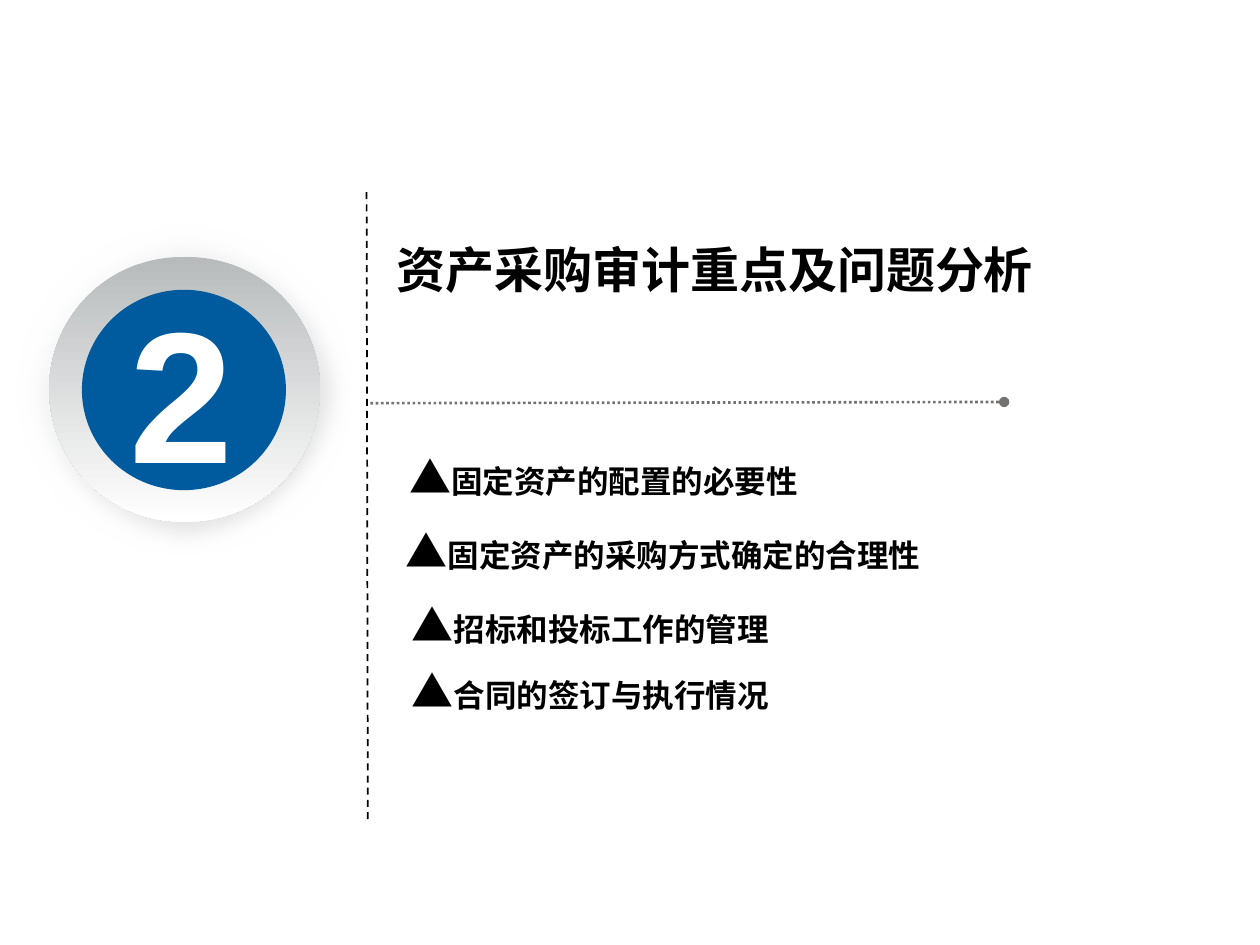
from dataclasses import dataclass

from lxml import etree
from pptx import Presentation
from pptx import util as u
from pptx.dml.color import RGBColor
from pptx.enum import dml, shapes
from pptx.oxml.ns import qn


@dataclass(frozen=True)
class Theme:
    latin: str = "Arial"
    chinese: str = "Noto Sans CJK SC"
    black: str = "000000"
    white: str = "FFFFFF"
    blue: str = "005A9E"
    halo: str = "D9D9D9"
    ring: str = "B8BBBC"
    rule: str = "767171"
    title_size: float = 28
    number_size: float = 106.7
    marker_size: float = 24
    item_size: float = 18


THEME = Theme()
OVAL = shapes.MSO_SHAPE.OVAL


def points(*values):
    return [u.Pt(value) for value in values]


def add_element(parent, tag, **attributes):
    element = etree.SubElement(parent, qn(tag))
    for name, value in attributes.items():
        element.set(name, str(value))
    return element


def add_disc(slide, box, kind=OVAL, color=THEME.blue, gradient=None):
    """Add a borderless round shape, filled plainly or from a colour to white."""
    shape = slide.shapes.add_shape(kind, *points(*box))
    shape.shadow.inherit = False
    shape.line.fill.background()
    if gradient is None:
        shape.fill.solid()
        shape.fill.fore_color.rgb = RGBColor.from_string(color)
    else:
        shape.fill.gradient()
        shape.fill.gradient_angle = gradient
        for stop, position, shade in zip(shape.fill.gradient_stops, (0, 1), (color, THEME.white)):
            stop.position = position
            stop.color.rgb = RGBColor.from_string(shade)
    return shape


def make_halo(shape, radius):
    """Turn the gradient radial from the lower right and soften the edge."""
    properties = shape._element.spPr
    gradient = properties.find(qn("a:gradFill"))
    gradient.remove(gradient.find(qn("a:lin")))
    radial = add_element(gradient, "a:path", path="circle")
    add_element(radial, "a:fillToRect", l=100000, t=100000)
    effects = properties.find(qn("a:effectLst"))
    add_element(effects, "a:softEdge", rad=int(u.Pt(radius)))


def add_line(slide, ends, color, width, dash, tail=None):
    line = slide.shapes.add_connector(shapes.MSO_CONNECTOR.STRAIGHT, *points(*ends))
    line.line.color.rgb = RGBColor.from_string(color)
    line.line.width = u.Pt(width)
    line.line.dash_style = dash
    if tail:
        add_element(line.line._get_or_add_ln(), "a:tailEnd", type=tail)
    add_element(line._element.spPr, "a:effectLst")


def add_text(slide, box, runs, font=THEME.latin, color=THEME.black, spacing=None,
             insets=(7.2, 3.6)):
    """Add one paragraph; runs holds (wording, size, bold) for each run."""
    frame = slide.shapes.add_textbox(*points(*box)).text_frame
    frame.word_wrap = True
    frame.margin_left = frame.margin_right = u.Pt(insets[0])
    frame.margin_top = frame.margin_bottom = u.Pt(insets[1])
    paragraph = frame.paragraphs[0]
    if spacing:
        paragraph.line_spacing = u.Pt(spacing)
    for wording, size, bold in runs:
        run = paragraph.add_run()
        run.text = wording
        run.font.name = font
        run.font.size = u.Pt(size)
        run.font.bold = bold
        run.font.color.rgb = RGBColor.from_string(color)
        add_element(run.font._element, "a:ea", typeface=THEME.chinese)


def add_item(slide, box, wording, **options):
    runs = [("▲", THEME.marker_size, False), (wording, THEME.item_size, True)]
    add_text(slide, box, runs, font=THEME.chinese, **options)


def add_number_badge(slide, number):
    halo = add_disc(slide, (8.6, 128.2, 193.7, 189.4), color=THEME.halo, gradient=0)
    make_halo(halo, 12)
    ring = add_disc(slide, (28.1, 146.9, 154.8, 151.2), shapes.MSO_SHAPE.ROUNDED_RECTANGLE,
                    THEME.ring, gradient=270)
    ring.adjustments[0] = 0.5
    add_disc(slide, (46.8, 165.6, 116.6, 114.5))
    add_text(slide, (67, 154.8, 77, 135.4), [(number, THEME.number_size, True)],
             color=THEME.white)


def main():
    presentation = Presentation()
    presentation.slide_width, presentation.slide_height = points(720, 540)
    slide = presentation.slides.add_slide(presentation.slide_layouts[6])

    add_text(slide, (226.8, 130.3, 463, 40.3),
             [("资产采购审计重点及问题分析", THEME.title_size, True)],
             spacing=40, insets=(0, 0))
    add_number_badge(slide, "2")
    add_line(slide, (210.2, 468, 209.5, 108.7), THEME.black, 1, dml.MSO_LINE.DASH)
    add_line(slide, (211.7, 230.4, 573.8, 229.7), THEME.rule, 1.5,
             dml.MSO_LINE.ROUND_DOT, tail="oval")

    add_item(slide, (226.8, 247, 383, 79.2), "固定资产的配置的必要性", spacing=36)
    add_item(slide, (226.8, 290.2, 418.3, 41), "固定资产的采购方式确定的合理性",
             spacing=36, insets=(5, 2.9))
    add_item(slide, (228.2, 339.1, 418.3, 87.1), "招标和投标工作的管理")
    add_item(slide, (228.2, 369.4, 383, 79.9), "合同的签订与执行情况", spacing=36)

    presentation.save("out.pptx")


if __name__ == "__main__":
    main()
